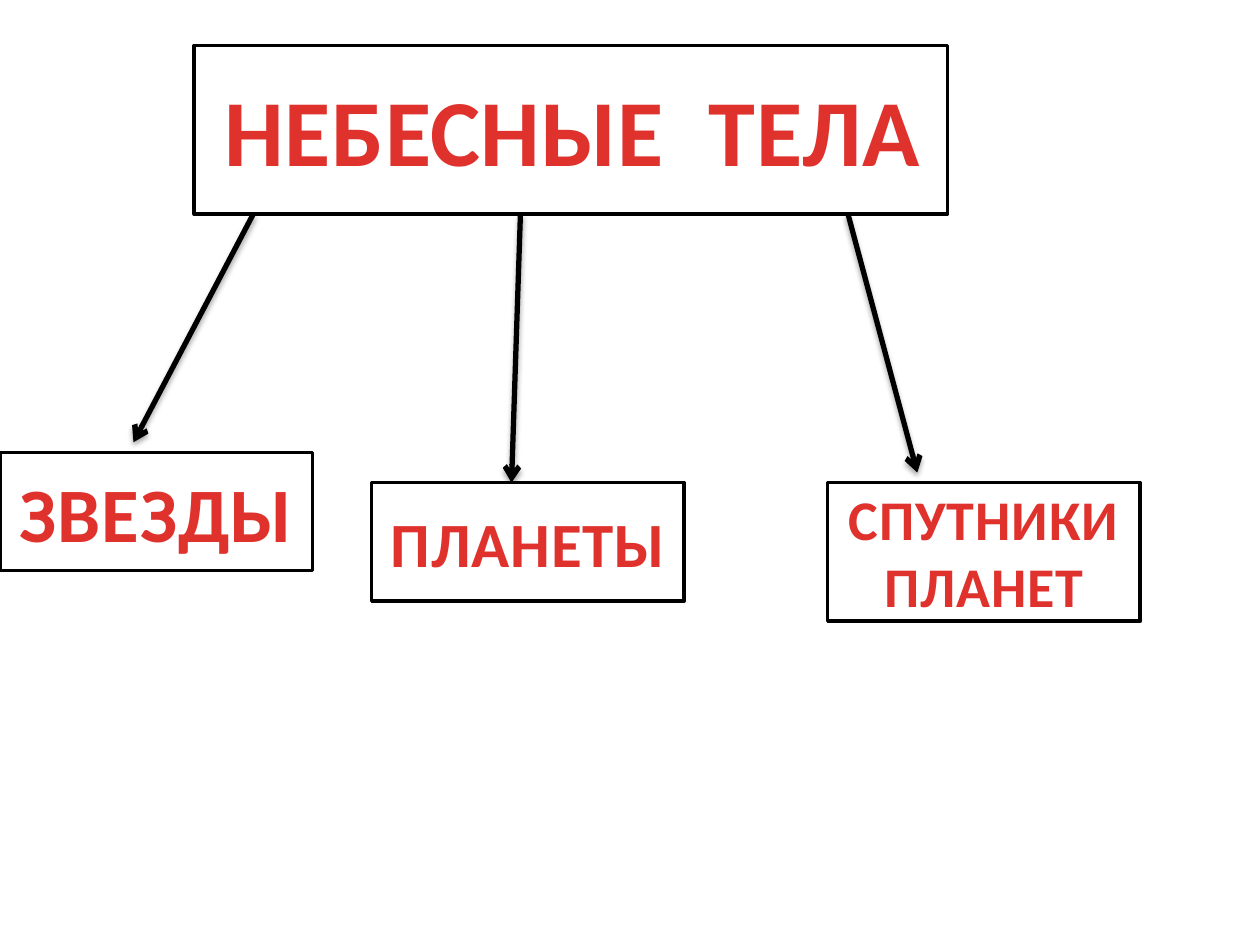
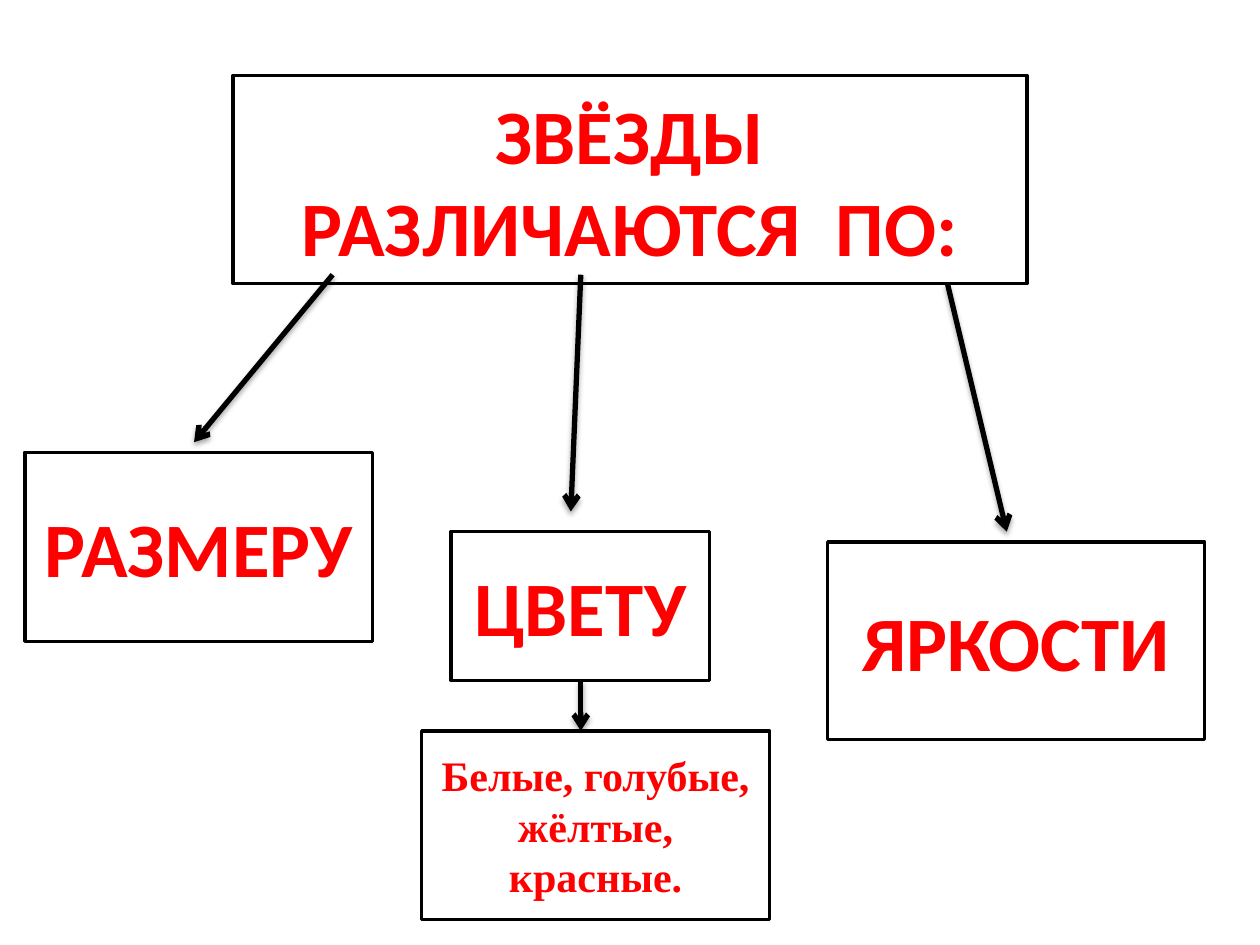
from lxml import etree
from pptx import Presentation
from pptx.dml.color import RGBColor
from pptx.enum.shapes import MSO_CONNECTOR, MSO_SHAPE
from pptx.enum.text import MSO_ANCHOR, MSO_AUTO_SIZE, PP_ALIGN
from pptx.oxml.ns import qn
from pptx.util import Pt

RECTANGLE = MSO_SHAPE.RECTANGLE
STRAIGHT = MSO_CONNECTOR.STRAIGHT
CENTER = PP_ALIGN.CENTER
MIDDLE = MSO_ANCHOR.MIDDLE
GROW = MSO_AUTO_SIZE.SHAPE_TO_FIT_TEXT

COLOURS = {
    "paper": "FFFFFF",
    "ink": "000000",
    "red": "FF0000",
    "glow": "E0322D",
    "ember": "A2201C",
}
SANS, SERIF = "Calibri", "Times New Roman"
FRAME_WIDTH, ARROW_WIDTH = 2, 3
KIND_WIDTH = 178.6
KIND_HEIGHT = 67.7
STAR_TRAIT_SIZE = (198.7, 108)


def colour(name):
    return RGBColor.from_string(COLOURS[name])


def apply(target, settings):
    for name, value in settings.items():
        setattr(target, name, value)


def paint_red(font):
    font.fill.solid()
    font.fill.fore_color.rgb = colour("red")


def paint_glow(font):
    font.fill.gradient()
    font.fill.gradient_angle = 270
    stops = zip(font.fill.gradient_stops, (("glow", 0.25), ("ember", 1)))
    for stop, (name, position) in stops:
        stop.color.rgb = colour(name)
        stop.position = position


def write(holder, words, size, face=SANS, glowing=False):
    paragraph = holder.text_frame.paragraphs[0]
    paragraph.alignment = CENTER
    label = paragraph.add_run()
    label.text = words
    apply(label.font, {"size": Pt(size), "name": face, "bold": True})
    if glowing:
        paint_glow(label.font)
        label.font._element.set("spc", "50")
    else:
        paint_red(label.font)


def add_frame(slide, place):
    frame = slide.shapes.add_shape(RECTANGLE, *map(Pt, place))
    frame.shadow.inherit = False
    frame.fill.solid()
    frame.fill.fore_color.rgb = colour("paper")
    frame.line.color.rgb = colour("ink")
    frame.line.width = Pt(FRAME_WIDTH)
    apply(frame.text_frame, {"word_wrap": True, "vertical_anchor": MIDDLE})
    return frame


def add_heading(slide, place, words, size):
    heading = slide.shapes.add_textbox(*map(Pt, place))
    apply(heading.text_frame, {"word_wrap": False, "auto_size": GROW})
    write(heading, words, size, glowing=True)


def add_shadow(properties):
    effects = etree.SubElement(properties, qn("a:effectLst"))
    shadow = etree.SubElement(
        effects, qn("a:outerShdw"), blurRad=str(Pt(3.1)), dist=str(Pt(1.8)),
        dir="5400000", rotWithShape="0")
    tint = etree.SubElement(shadow, qn("a:srgbClr"), val=COLOURS["ink"])
    etree.SubElement(tint, qn("a:alpha"), val="35000")


def add_arrow(slide, start, end):
    arrow = slide.shapes.add_connector(STRAIGHT, *map(Pt, start + end))
    arrow.line.color.rgb = colour("ink")
    arrow.line.width = Pt(ARROW_WIDTH)
    etree.SubElement(arrow.line._get_or_add_ln(), qn("a:tailEnd"), type="arrow")
    add_shadow(arrow._element.spPr)


def build_celestial_bodies(slide):
    add_frame(slide, (111, 26, 430.5, 96.4))
    add_heading(slide, (118.8, 37.4, 416.9, 72.7), "НЕБЕСНЫЕ  ТЕЛА", 54)

    heading_bottom = 122.4
    for start_x, tip in (
        (144.7, (76.3, 252.7)),
        (297.4, (292.3, 275.8)),
        (484.6, (524.2, 270)),
    ):
        add_arrow(slide, (start_x, heading_bottom), tip)

    for words, size, left, top, height in (
        ("ЗВЕЗДЫ", 44, 0, 258.5, KIND_HEIGHT),
        ("ПЛАНЕТЫ", 36, 212.4, 275.8, KIND_HEIGHT),
        ("СПУТНИКИ ПЛАНЕТ", 32, 473, 275.8, 79.2),
    ):
        kind = add_frame(slide, (left, top, KIND_WIDTH, height))
        write(kind, words, size, glowing=True)


def build_star_traits(slide):
    heading = add_frame(slide, (133.2, 43.2, 453.6, 118.8))
    write(heading, "ЗВЁЗДЫ РАЗЛИЧАЮТСЯ  ПО:", 44)

    for start, tip in (
        ((190.1, 157), (110.9, 252.7)),
        ((331.9, 157), (326.2, 292.3)),
        ((541.4, 162), (575.3, 303.8)),
    ):
        add_arrow(slide, start, tip)

    for words, place in (
        ("РАЗМЕРУ", (14.2, 258.5, *STAR_TRAIT_SIZE)),
        ("ЦВЕТУ", (257.8, 303.8, 147.6, 85)),
        ("ЯРКОСТИ", (473, 309.6, 215.3, 113)),
    ):
        write(add_frame(slide, place), words, 44)

    add_arrow(slide, (331.9, 388.8), (331.9, 417.6))
    star_colours = add_frame(slide, (241, 417.6, *STAR_TRAIT_SIZE))
    write(star_colours, "Белые, голубые, жёлтые, красные.", 24, SERIF)


def main():
    deck = Presentation()
    apply(deck, {"slide_width": Pt(720), "slide_height": Pt(540)})
    blank = deck.slide_layouts[6]
    for build in (build_celestial_bodies, build_star_traits):
        slide = deck.slides.add_slide(blank)
        slide.background.fill.solid()
        slide.background.fill.fore_color.rgb = colour("paper")
        build(slide)
    deck.save("out.pptx")


if __name__ == "__main__":
    main()
